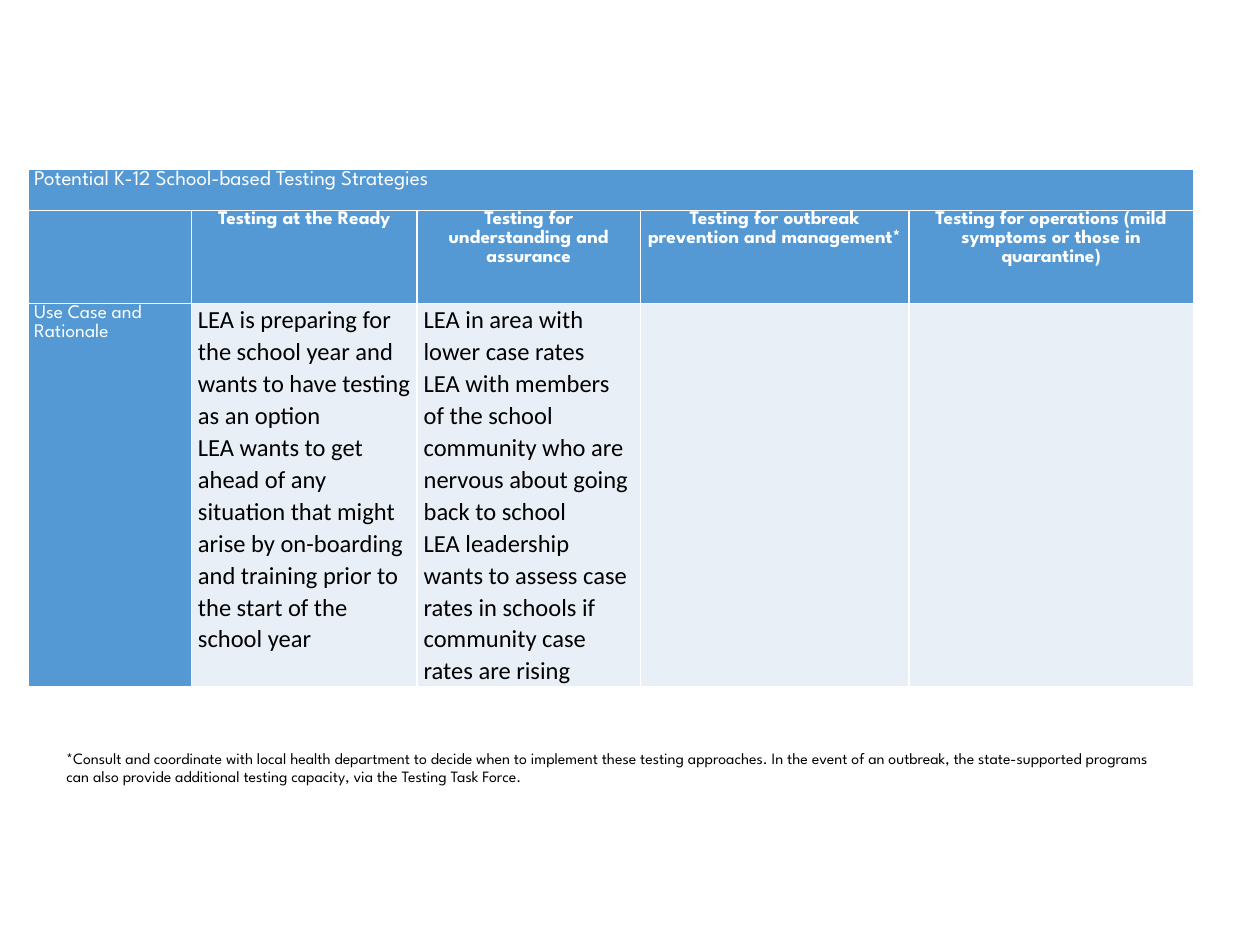
from dataclasses import dataclass
from typing import Optional

from lxml import etree
from pptx import Presentation
from pptx.dml.color import RGBColor
from pptx.enum.text import MSO_AUTO_SIZE, PP_ALIGN
from pptx.oxml.ns import qn
from pptx.util import Cm, Pt

LEFT, CENTER = PP_ALIGN.LEFT, PP_ALIGN.CENTER
FIT_SHAPE = MSO_AUTO_SIZE.SHAPE_TO_FIT_TEXT

BLUE = RGBColor(0x54, 0x99, 0xD3)
PALE = RGBColor(0xE9, 0xEF, 0xF7)
WHITE = RGBColor(0xFF, 0xFF, 0xFF)
BLACK = RGBColor(0x00, 0x00, 0x00)
HEAD_FONT, BODY_FONT = "League Spartan", "Calibri"


@dataclass(frozen=True)
class Style:
    font: str
    size: float
    color: RGBColor
    bold: bool = False
    align: PP_ALIGN = LEFT
    spacing: Optional[float] = 1.07
    fill: Optional[RGBColor] = None


TITLE = Style(HEAD_FONT, 12, WHITE, fill=BLUE)
HEADER = Style(HEAD_FONT, 11, WHITE, bold=True, align=CENTER, fill=BLUE)
ROW_LABEL = Style(HEAD_FONT, 11, WHITE, fill=BLUE)
BODY = Style(BODY_FONT, 14, BLACK, fill=PALE)
FOOTNOTE = Style(HEAD_FONT, 9, BLACK, spacing=None)

COL_WIDTHS = [3.3, 4.55, 4.5, 5.41, 5.74]
ROW_HEIGHTS = [0.83, 1.88, 6.93]

TITLE_TEXT = "Potential K-12 School-based Testing Strategies"
STRATEGIES = [
    "Testing at the Ready",
    "Testing for understanding and assurance",
    "Testing for outbreak prevention and management*",
    "Testing for operations (mild symptoms or those in quarantine)",
]
USE_CASES = [
    ["LEA is preparing for the school year and wants to have testing as an option",
     "LEA wants to get ahead of any situation that might arise by on-boarding "
     "and training prior to the start of the school year"],
    ["LEA in area with lower case rates",
     "LEA with members of the school community who are nervous about going back to school",
     "LEA leadership wants to assess case rates in schools if community case rates are rising"],
    [],
    [],
]
FOOTNOTE_TEXT = (
    "*Consult and coordinate with local health department to decide when to implement "
    "these testing approaches. In the event of an outbreak, the state-supported programs "
    "can also provide additional testing capacity, via the Testing Task Force."
)


def write(tf, lines: list[str], style: Style) -> None:
    """Put one paragraph per line into a text frame."""
    for i, line in enumerate(lines):
        p = tf.paragraphs[0] if i == 0 else tf.add_paragraph()
        p.alignment, p.line_spacing = style.align, style.spacing
        r = p.add_run()
        r.text = line
        r.font.color.rgb = style.color
        values = {"name": style.font, "size": Pt(style.size), "bold": style.bold}
        for name, value in values.items():
            setattr(r.font, name, value)


def set_borders(cell, color: RGBColor, width: float) -> None:
    """Draw all four borders; they must precede the fill in the XML."""
    tc_pr = cell._tc.get_or_add_tcPr()
    for i, side in enumerate(("a:lnL", "a:lnR", "a:lnT", "a:lnB")):
        ln = etree.Element(qn(side), w=str(Pt(width)))
        solid = etree.SubElement(ln, qn("a:solidFill"))
        etree.SubElement(solid, qn("a:srgbClr"), val=str(color))
        tc_pr.insert(i, ln)


def fill_cell(cell, lines: list[str], style: Style) -> None:
    margins = {"margin_left": Cm(0.13), "margin_right": Cm(0.13),
               "margin_top": 0, "margin_bottom": 0}
    for name, value in margins.items():
        setattr(cell, name, value)
    cell.fill.solid()
    cell.fill.fore_color.rgb = style.fill
    set_borders(cell, WHITE, 1)
    write(cell.text_frame, lines, style)


def add_strategy_table(slide) -> None:
    frame = slide.shapes.add_table(
        len(ROW_HEIGHTS), len(COL_WIDTHS), Cm(0.56), Cm(3.41),
        Cm(sum(COL_WIDTHS)), Cm(sum(ROW_HEIGHTS)))
    table = frame.table
    for col, width in zip(table.columns, COL_WIDTHS):
        col.width = Cm(width)
    for row, height in zip(table.rows, ROW_HEIGHTS):
        row.height = Cm(height)

    # Title across all columns
    for col in range(len(COL_WIDTHS)):
        fill_cell(table.cell(0, col), [TITLE_TEXT] if col == 0 else [], TITLE)
    table.cell(0, 0).merge(table.cell(0, len(COL_WIDTHS) - 1))

    # Row labels, then one column per strategy
    fill_cell(table.cell(1, 0), [], HEADER)
    fill_cell(table.cell(2, 0), ["Use Case and Rationale"], ROW_LABEL)
    for col, (strategy, cases) in enumerate(zip(STRATEGIES, USE_CASES), start=1):
        fill_cell(table.cell(1, col), [strategy], HEADER)
        fill_cell(table.cell(2, col), cases, BODY)


def add_footnote(slide) -> None:
    sp = slide.shapes.add_textbox(Cm(1.09), Cm(14.96), Cm(22.73), Cm(1.6))
    tf = sp.text_frame
    tf.word_wrap = True
    tf.auto_size = FIT_SHAPE
    write(tf, [FOOTNOTE_TEXT], FOOTNOTE)


def main() -> None:
    prs = Presentation()
    prs.slide_width, prs.slide_height = Cm(25.4), Cm(19.05)
    slide = prs.slides.add_slide(prs.slide_layouts[6])
    add_strategy_table(slide)
    add_footnote(slide)
    prs.save("out.pptx")


if __name__ == "__main__":
    main()
